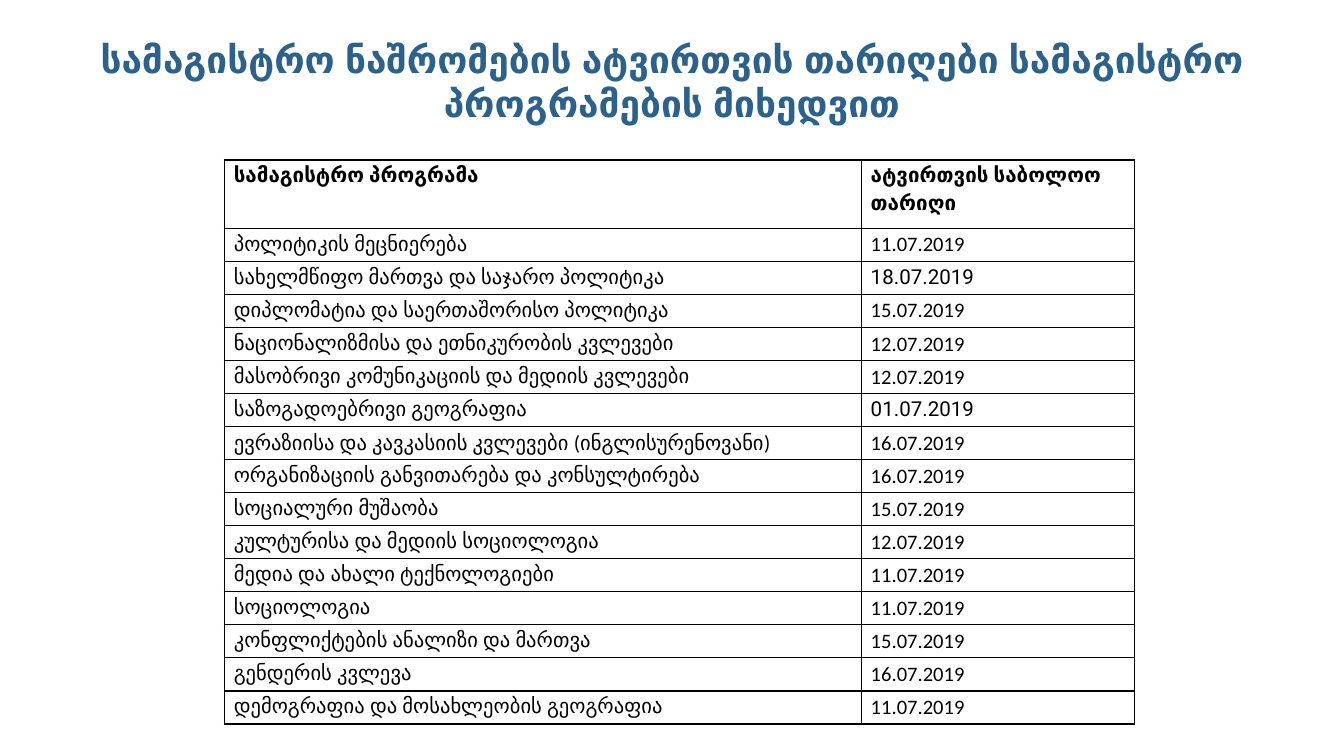
from lxml import etree
from pptx import Presentation
from pptx.dml.color import RGBColor
from pptx.enum.text import MSO_ANCHOR, MSO_AUTO_SIZE, PP_ALIGN
from pptx.oxml.ns import qn
from pptx.util import Inches, Pt

BOTTOM = MSO_ANCHOR.BOTTOM
TOP = MSO_ANCHOR.TOP
CENTER = PP_ALIGN.CENTER
NO_FIT = MSO_AUTO_SIZE.NONE

COLORS = {"title": "2B618B", "text": "000000", "line": "000000"}
MAIN, ALT = "Roboto", "Calibri"
TITLE = "სამაგისტრო ნაშრომების ატვირთვის თარიღები სამაგისტრო პროგრამების მიხედვით"
HEADS = ("სამაგისტრო პროგრამა", "ატვირთვის საბოლოო თარიღი")
DATES = [
    ("პოლიტიკის მეცნიერება", "11.07.2019", ALT),
    ("სახელმწიფო მართვა და საჯარო პოლიტიკა", "18.07.2019", MAIN),
    ("დიპლომატია და საერთაშორისო პოლიტიკა", "15.07.2019", ALT),
    ("ნაციონალიზმისა და ეთნიკურობის კვლევები", "12.07.2019", ALT),
    ("მასობრივი კომუნიკაციის და მედიის კვლევები", "12.07.2019", ALT),
    ("საზოგადოებრივი გეოგრაფია", "01.07.2019", MAIN),
    ([("ევრაზიისა და კავკასიის კვლევები", MAIN), (" (", ALT),
      ("ინგლისურენოვანი", MAIN), (")", ALT)], "16.07.2019", ALT),
    ("ორგანიზაციის განვითარება და კონსულტირება", "16.07.2019", ALT),
    ("სოციალური მუშაობა", "15.07.2019", ALT),
    ("კულტურისა და მედიის სოციოლოგია", "12.07.2019", ALT),
    ("მედია და ახალი ტექნოლოგიები", "11.07.2019", ALT),
    ("სოციოლოგია", "11.07.2019", ALT),
    ("კონფლიქტების ანალიზი და მართვა", "15.07.2019", ALT),
    ("გენდერის კვლევა", "16.07.2019", ALT),
    ("დემოგრაფია და მოსახლეობის გეოგრაფია", "11.07.2019", ALT),
]


def set_font(font, name, size, color, bold):
    font.name = name
    font.size = Pt(size)
    font.bold = bold
    font.color.rgb = RGBColor.from_string(COLORS[color])


def add_title(slide, left, top, width, height):
    title = slide.shapes.title
    title.left, title.top = Inches(left), Inches(top)
    title.width, title.height = Inches(width), Inches(height)
    frame = title.text_frame
    frame.text = TITLE
    frame.auto_size = NO_FIT
    frame.word_wrap = True
    frame.vertical_anchor = BOTTOM
    frame.margin_left = frame.margin_right = Inches(0.1)
    frame.margin_top = frame.margin_bottom = Inches(0.1)
    para = frame.paragraphs[0]
    para.alignment = CENTER
    para.line_spacing = 1.0
    set_font(para.font, "Arial", 19.8, "title", True)


def add_lines(cell):
    props = cell._tc.get_or_add_tcPr()
    for side in ("a:lnL", "a:lnR", "a:lnT", "a:lnB"):
        line = etree.SubElement(props, qn(side), w=str(Pt(1)))
        fill = etree.SubElement(line, qn("a:solidFill"))
        etree.SubElement(fill, qn("a:srgbClr"), val=COLORS["line"])


def fill_cell(cell, text, name, bold):
    add_lines(cell)
    cell.fill.background()
    cell.margin_left = cell.margin_right = Inches(0.07)
    cell.margin_top = cell.margin_bottom = 0
    cell.vertical_anchor = TOP
    para = cell.text_frame.paragraphs[0]
    para.line_spacing = 1.15
    set_font(para.font, name, 11, "text", bold)
    parts = [(text, name)] if isinstance(text, str) else text
    for part, face in parts:
        run = para.add_run()
        run.text = part
        set_font(run.font, face, 11, "text", bold)


def add_dates(slide, left, top, width, height):
    table = slide.shapes.add_table(
        len(DATES) + 1, 2,
        Inches(left), Inches(top), Inches(width), Inches(height)).table
    table.first_row = table.horz_banding = False
    first = 0.7 * width
    table.columns[0].width = Inches(first)
    table.columns[1].width = Inches(width - first)
    head_row = 0.51
    step = (height - head_row) / len(DATES)
    for index, row in enumerate(table.rows):
        row.height = Inches(step if index else head_row)
    for col, head in enumerate(HEADS):
        fill_cell(table.cell(0, col), head, MAIN, True)
    for index, (program, date, face) in enumerate(DATES, 1):
        fill_cell(table.cell(index, 0), program, MAIN, False)
        fill_cell(table.cell(index, 1), date, face, False)


def main():
    deck = Presentation()
    deck.slide_width = Inches(10)
    deck.slide_height = deck.slide_width * 9 // 16
    slide = deck.slides.add_slide(deck.slide_layouts[5])
    add_title(slide, 0.5, 0.23, 9, 0.8)
    add_dates(slide, 1.67, 1.19, 6.77, 4.2)
    deck.save("out.pptx")


if __name__ == "__main__":
    main()
